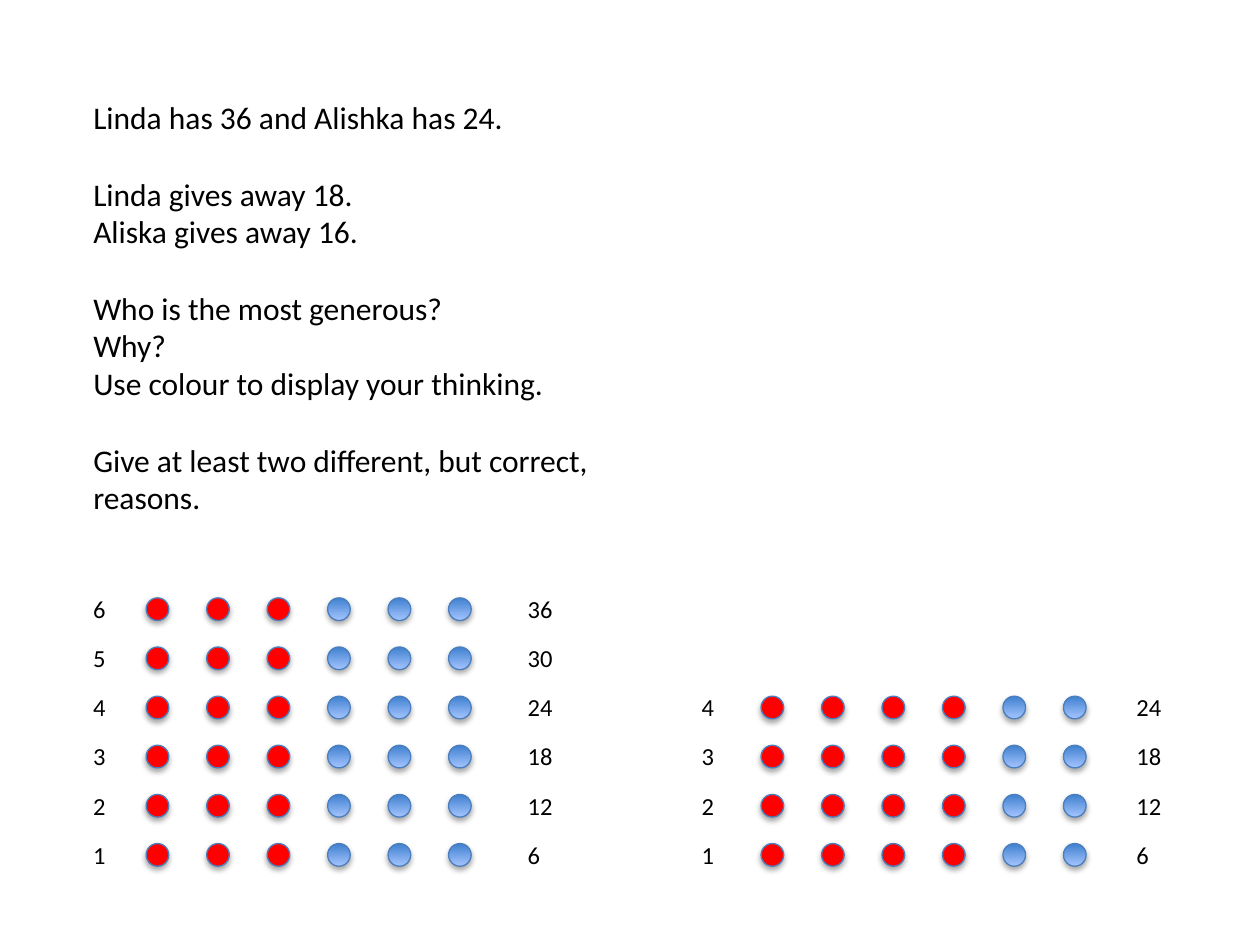
from lxml import etree
from pptx import Presentation
from pptx import util as u
from pptx.dml.color import RGBColor
from pptx.enum import shapes, text
from pptx.oxml.ns import qn

COLORS = {"ink": "000000", "given": "FF0000", "kept_dark": "3F80CE",
          "kept_light": "A4C4FF", "outline": "4B7EBC"}
FONT = "Calibri"

# Counter grid, in inches
COLUMNS = 6
COLUMN_STEP = 0.48
ROW_STEP = 0.39
DOT = 0.18
LABEL_HEIGHT = 0.34
LABEL_WIDTH = 0.35
TOTAL_INSET = 3.45

# Each group of lines is set apart by one line of space
QUESTION = [
    ["Linda has 36 and Alishka has 24."],
    ["Linda gives away 18.", "Aliska gives away 16."],
    ["Who is the most generous?", "Why?", "Use colour to display your thinking."],
    ["Give at least two different, but correct, reasons."],
]

BOARDS = [
    {"left": 0.64, "top": 4.64, "rows": 6, "given": 3, "dot_inset": 0.52, "total_width": 0.6},
    {"left": 5.47, "top": 5.42, "rows": 4, "given": 4, "dot_inset": 0.57, "total_width": 0.55},
]


def color(name):
    return RGBColor.from_string(COLORS[name])


def apply(target, values):
    for name, value in values.items():
        setattr(target, name, value)


def style_font(font, size):
    apply(font, {"name": FONT, "size": u.Pt(size)})
    font.color.rgb = color("ink")


def add_question(slide, left, top, width, height):
    """Word problem in the body placeholder."""
    body = slide.placeholders[1]
    apply(body, {"left": u.Inches(left), "top": u.Inches(top),
                 "width": u.Inches(width), "height": u.Inches(height)})
    frame = body.text_frame
    apply(frame, {"word_wrap": True, "auto_size": text.MSO_AUTO_SIZE.NONE,
                  "vertical_anchor": text.MSO_ANCHOR.TOP})
    frame.text = "\n".join(line for group in QUESTION for line in group)
    group_starts = [group[0] for group in QUESTION[1:]]
    for paragraph in frame.paragraphs:
        gap = 22 if paragraph.text in group_starts else 0
        apply(paragraph, {"space_before": u.Pt(gap), "alignment": text.PP_ALIGN.LEFT})
        properties = paragraph._p.get_or_add_pPr()
        properties.set("marL", "0")
        properties.set("indent", "0")
        etree.SubElement(properties, qn("a:buNone"))
        style_font(paragraph.runs[0].font, 18)


def add_label(slide, left, top, width, words):
    box = slide.shapes.add_textbox(u.Inches(left), u.Inches(top),
                                   u.Inches(width), u.Inches(LABEL_HEIGHT))
    box.text_frame.word_wrap = True
    box.text_frame.text = words
    style_font(box.text_frame.paragraphs[0].runs[0].font, 14)


def add_soft_shadow(shape):
    shape.shadow.inherit = False
    effects = shape.element.spPr.find(qn("a:effectLst"))
    shadow = etree.SubElement(effects, qn("a:outerShdw"), blurRad="40000",
                              dist="23000", dir="5400000", rotWithShape="0")
    tint = etree.SubElement(shadow, qn("a:srgbClr"), val=COLORS["ink"])
    etree.SubElement(tint, qn("a:alpha"), val="35000")


def add_counter(slide, left, top, given):
    """One counter: red when given away, shaded blue when kept."""
    dot = slide.shapes.add_shape(shapes.MSO_SHAPE.OVAL, u.Inches(left), u.Inches(top),
                                 u.Inches(DOT), u.Inches(DOT))
    dot.element.spPr.find(qn("a:xfrm")).set("flipV", "1")
    if given:
        dot.fill.solid()
        dot.fill.fore_color.rgb = color("given")
    else:
        dot.fill.gradient()
        dot.fill.gradient_angle = 90
        for stop, name in zip(dot.fill.gradient_stops, ("kept_dark", "kept_light")):
            stop.color.rgb = color(name)
    dot.line.color.rgb = color("outline")
    dot.line.width = u.Pt(0.75)
    add_soft_shadow(dot)


def add_board(slide, left, top, rows, given, dot_inset, total_width):
    """Rows of counters, numbered from the bottom, with running totals."""
    for row in range(rows):
        number = rows - row
        middle = top + (row + 0.5) * ROW_STEP
        label_top = middle - LABEL_HEIGHT / 2
        add_label(slide, left, label_top, LABEL_WIDTH, str(number))
        for column in range(COLUMNS):
            add_counter(slide, left + dot_inset + column * COLUMN_STEP,
                        middle - DOT / 2, column < given)
        add_label(slide, left + TOTAL_INSET, label_top, total_width, str(number * COLUMNS))


def main():
    presentation = Presentation()
    apply(presentation, {"slide_width": u.Inches(10), "slide_height": u.Inches(7.5)})
    slide = presentation.slides.add_slide(presentation.slide_layouts[1])
    title = slide.shapes.title.element
    title.getparent().remove(title)

    add_question(slide, 0.64, 0.73, 4.24, 3.74)
    for board in BOARDS:
        add_board(slide, **board)
    presentation.save("out.pptx")


if __name__ == "__main__":
    main()
